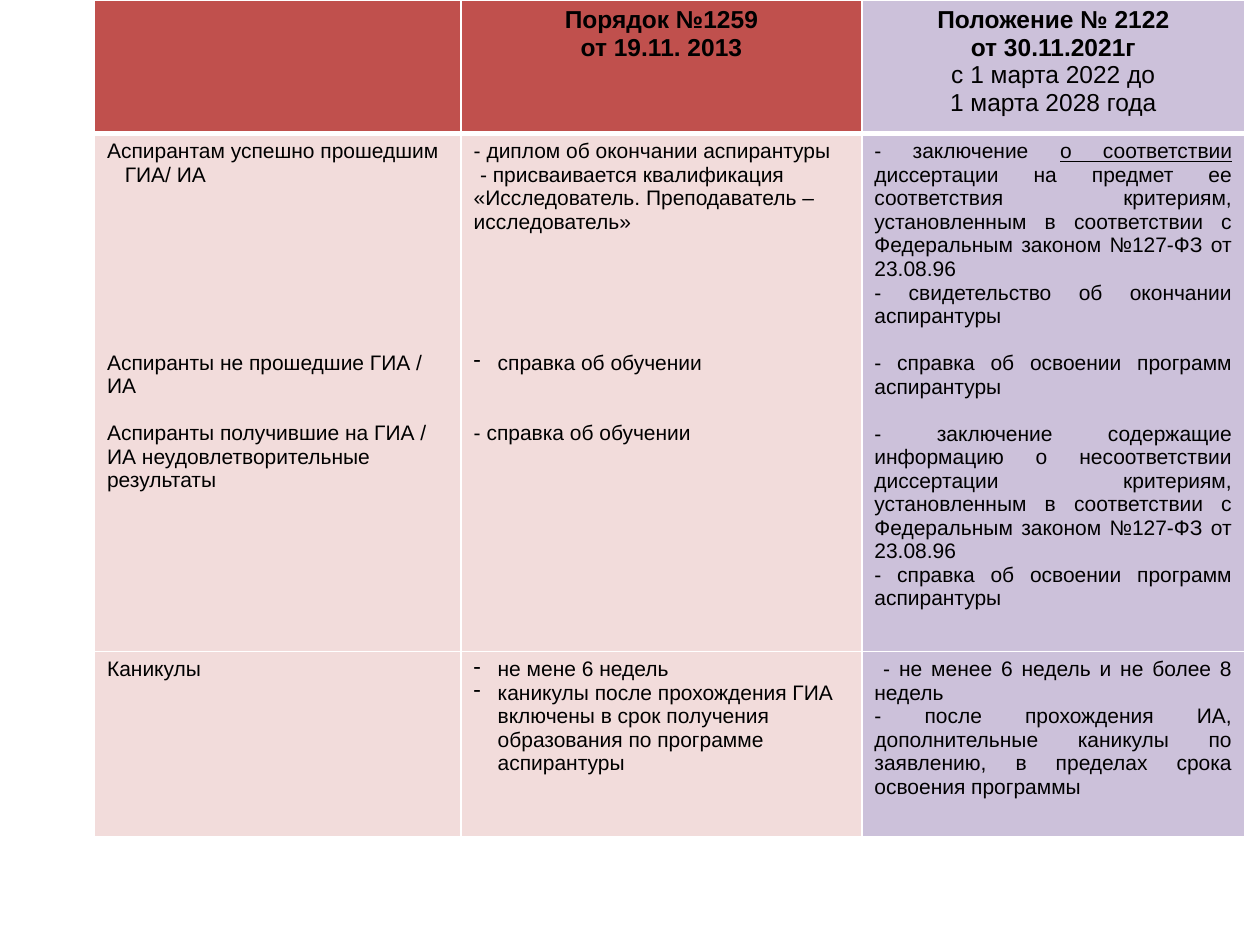
from dataclasses import dataclass

from lxml.etree import SubElement
from pptx import Presentation
from pptx.dml.color import RGBColor
from pptx.enum.text import PP_ALIGN
from pptx.oxml.ns import qn
from pptx.util import Inches, Pt


@dataclass(frozen=True)
class Theme:
    """Colours, font and sizes of the slide."""
    font: str = "Arial"
    head_size: float = 14
    body_size: float = 12
    line_pitch: float = 13.4
    text: str = "000000"
    border: str = "FFFFFF"
    head: str = "C0504D"
    old_rules: str = "F2DCDB"
    new_rules: str = "CCC1DA"
    thin: float = 1
    thick: float = 3


@dataclass(frozen=True)
class Para:
    """A paragraph: text runs, lines of space before, indents in inches."""
    runs: tuple
    gap: int = 0
    left: float = 0
    first: float = 0
    bullet: str = ""
    bold: bool = False


THEME = Theme()
COLUMNS = (2.91, 3.18, 3.04)
ROWS = (1.06, 4.11, 1.47)
LAW = "установленным в соответствии с Федеральным законом №127-ФЗ от 23.08.96"


def para(text, **options):
    """Make a paragraph of one run."""
    return Para(((text, False),), **options)


def dash_item(text, **options):
    """Make a hanging paragraph with a dash bullet."""
    return para(text, left=0.19, first=-0.19, bullet="-", **options)


CELLS = (
    (
        (),
        (para("Порядок №1259", bold=True), para("от 19.11. 2013", bold=True)),
        (
            para("Положение № 2122", bold=True),
            para("от 30.11.2021г", bold=True),
            para("с 1 марта 2022 до"),
            para("1 марта 2028 года"),
        ),
    ),
    (
        (
            para("Аспирантам успешно прошедшим ГИА/ ИА", left=0.14, first=-0.14),
            para("Аспиранты не прошедшие ГИА / ИА", gap=7),
            para("Аспиранты получившие на ГИА / ИА неудовлетворительные результаты", gap=1),
        ),
        (
            para("- диплом об окончании аспирантуры"),
            para("- присваивается квалификация «Исследователь. Преподаватель – исследователь»",
                 first=0.05),
            dash_item("справка об обучении", gap=5),
            para("- справка об обучении", gap=2),
        ),
        (
            Para((
                ("- заключение ", False),
                ("о соответствии ", True),
                (f"диссертации на предмет ее соответствия критериям, {LAW}", False),
            )),
            para("- свидетельство об окончании аспирантуры"),
            para("- справка об освоении программ аспирантуры", gap=1),
            para("- заключение содержащие информацию о несоответствии диссертации "
                 f"критериям, {LAW}", gap=1),
            para("- справка об освоении программ аспирантуры"),
        ),
    ),
    (
        (para("Каникулы"),),
        (
            dash_item("не мене 6 недель"),
            dash_item("каникулы после прохождения ГИА включены в срок получения "
                      "образования по программе аспирантуры"),
        ),
        (
            para("- не менее 6 недель и не более 8 недель", first=0.07),
            para("- после прохождения ИА, дополнительные каникулы по заявлению, "
                 "в пределах срока освоения программы"),
        ),
    ),
)


def set_borders(cell, top, bottom):
    """Draw the four cell borders."""
    widths = {"a:lnL": THEME.thin, "a:lnR": THEME.thin, "a:lnT": top, "a:lnB": bottom}
    tc_pr = cell._tc.get_or_add_tcPr()
    for tag, width in widths.items():
        ln = SubElement(tc_pr, qn(tag), w=str(Pt(width)))
        SubElement(SubElement(ln, qn("a:solidFill")), qn("a:srgbClr"), val=THEME.border)


def write_paragraph(p, content, align, size):
    """Fill one paragraph run by run."""
    p_pr = p._p.get_or_add_pPr()
    p_pr.set("marL", str(Inches(content.left)))
    p_pr.set("indent", str(Inches(content.first)))
    if content.bullet:
        SubElement(p_pr, qn("a:buChar"), char=content.bullet)
    p.alignment = align
    if content.gap:
        p.space_before = Pt(content.gap * THEME.line_pitch)
    for text, underline in content.runs:
        r = p.add_run()
        r.text = text
        r.font.name = THEME.font
        r.font.size = Pt(size)
        r.font.bold = content.bold
        r.font.underline = underline
        r.font.color.rgb = RGBColor.from_string(THEME.text)


def format_cell(cell, paragraphs, row, column):
    """Style and fill a cell according to its place in the table."""
    header, newest = row == 0, column == len(COLUMNS) - 1
    set_borders(cell, THEME.thick if row == 1 else THEME.thin,
                THEME.thick if header else THEME.thin)
    color = THEME.new_rules if newest else THEME.head if header else THEME.old_rules
    cell.fill.solid()
    cell.fill.fore_color.rgb = RGBColor.from_string(color)
    align = PP_ALIGN.CENTER if header else PP_ALIGN.JUSTIFY if newest else PP_ALIGN.LEFT
    size = THEME.head_size if header else THEME.body_size
    tf = cell.text_frame
    for i, content in enumerate(paragraphs):
        p = tf.add_paragraph() if i else tf.paragraphs[0]
        write_paragraph(p, content, align, size)


def add_comparison(s, left, top):
    """Add the table comparing the two regulations."""
    frame = s.shapes.add_table(len(ROWS), len(COLUMNS), Inches(left), Inches(top),
                               Inches(sum(COLUMNS)), Inches(sum(ROWS)))
    table = frame.table
    for column, width in zip(table.columns, COLUMNS):
        column.width = Inches(width)
    for row, height in zip(table.rows, ROWS):
        row.height = Inches(height)
    for i, row in enumerate(CELLS):
        for j, paragraphs in enumerate(row):
            format_cell(table.cell(i, j), paragraphs, i, j)


def main():
    """Build and save the slide."""
    prs = Presentation()
    prs.slide_width, prs.slide_height = Inches(10), Inches(7.5)
    s = prs.slides.add_slide(prs.slide_layouts[6])
    add_comparison(s, 0.75, 0)
    prs.save("out.pptx")


if __name__ == "__main__":
    main()
